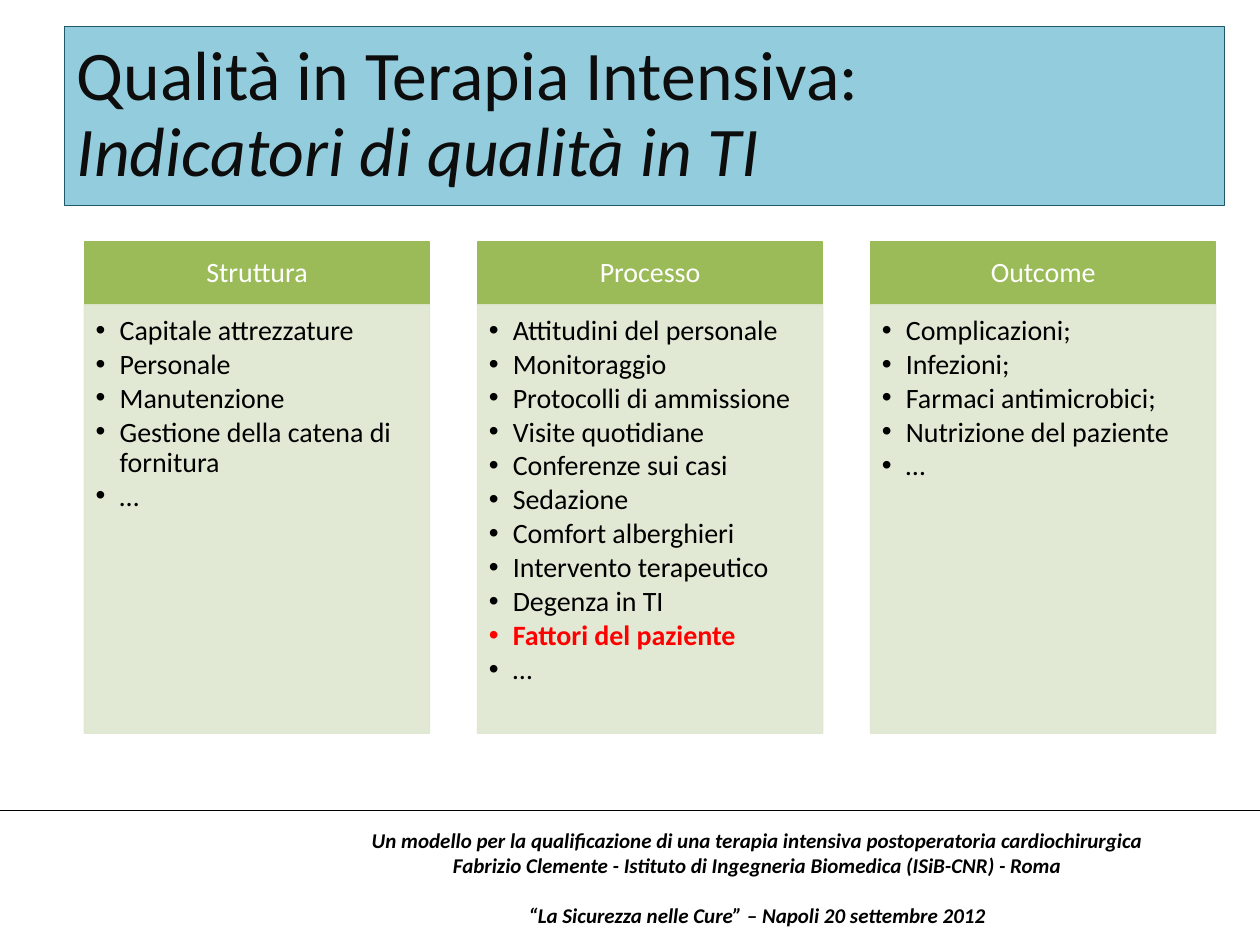
from lxml.etree import SubElement
from pptx import Presentation
from pptx.dml.color import RGBColor
from pptx.enum.shapes import MSO_CONNECTOR as Connector, MSO_SHAPE as Shape
from pptx.enum.text import MSO_ANCHOR as Anchor, PP_ALIGN as Align
from pptx.oxml.ns import qn
from pptx.util import Inches, Pt

COLORS = {
    "title_fill": "93CDDD", "title_line": "215968", "title_text": "0D0D0D",
    "header": "9BBB59", "body": "DEE7D1",
    "white": "FFFFFF", "black": "000000", "highlight": "FF0000",
}
HIGHLIGHTED = "Fattori del paziente"
INDICATORS = {
    "Struttura": ["Capitale attrezzature", "Personale", "Manutenzione",
                  "Gestione della catena di fornitura", "…"],
    "Processo": ["Attitudini del personale", "Monitoraggio", "Protocolli di ammissione",
                 "Visite quotidiane", "Conferenze sui casi", "Sedazione",
                 "Comfort alberghieri", "Intervento terapeutico", "Degenza in TI",
                 HIGHLIGHTED, "…"],
    "Outcome": ["Complicazioni;", "Infezioni;", "Farmaci antimicrobici;",
                "Nutrizione del paziente", "…"],
}
CREDITS = [
    "Un modello per la qualificazione di una terapia intensiva postoperatoria cardiochirurgica",
    "Fabrizio Clemente - Istituto di Ingegneria Biomedica (ISiB-CNR) - Roma",
    "“La Sicurezza nelle Cure” – Napoli 20 settembre 2012",
]


def color(name):
    """Return the named colour."""
    return RGBColor.from_string(COLORS[name])


def add_panel(slide, box, fill, line):
    """Add a filled rectangle with a thin outline."""
    panel = slide.shapes.add_shape(Shape.RECTANGLE, *map(Inches, box))
    panel.shadow.inherit = False
    panel.fill.solid()
    panel.fill.fore_color.rgb = color(fill)
    panel.line.color.rgb = color(line)
    panel.line.width = Pt(0.75)
    return panel


def set_frame(shape, anchor, insets=(0.1, 0.05, 0.1, 0.05)):
    """Set wrapping, anchor and insets, and return the text frame."""
    frame = shape.text_frame
    frame.word_wrap = True
    frame.vertical_anchor = anchor
    (frame.margin_left, frame.margin_top,
     frame.margin_right, frame.margin_bottom) = map(Inches, insets)
    return frame


def add_line(frame, index, text, size, ink, align=Align.LEFT, spacing=0.9,
             bold=False, italic=False):
    """Write one paragraph with a single run."""
    paragraph = frame.add_paragraph() if index else frame.paragraphs[0]
    paragraph.alignment = align
    paragraph.line_spacing = spacing
    run = paragraph.add_run()
    run.text = text
    font = run.font
    font.name, font.size, font.bold, font.italic = "Calibri", Pt(size), bold, italic
    font.color.rgb = color(ink)
    return paragraph


def add_bullet(paragraph):
    """Give a paragraph a hanging round bullet."""
    properties = paragraph._p.get_or_add_pPr()
    properties.set("marL", str(Inches(0.19)))
    properties.set("indent", str(-Inches(0.19)))
    SubElement(properties, qn("a:buFont"), typeface="Arial")
    SubElement(properties, qn("a:buChar"), char="•")


def add_title(slide, box):
    """Place the title band with its two lines."""
    frame = set_frame(add_panel(slide, box, "title_fill", "title_line"), Anchor.MIDDLE)
    add_line(frame, 0, "Qualità in Terapia Intensiva:", 39.8, "title_text")
    add_line(frame, 1, "Indicatori di qualità in TI", 39.8, "title_text", italic=True)


def add_column(slide, box, heading, items):
    """Place one indicator column: a header above a bulleted body."""
    left, top, width, height = box
    header_height = 0.5
    header = add_panel(slide, (left, top, width, header_height), "header", "header")
    frame = set_frame(header, Anchor.MIDDLE, (0.12, 0.07, 0.12, 0.07))
    add_line(frame, 0, heading, 16, "white", Align.CENTER)

    body = add_panel(slide, (left, top + header_height, width, height - header_height),
                     "body", "body")
    for tint in body._element.spPr.iter(qn("a:srgbClr")):
        SubElement(tint, qn("a:alpha"), val="90000")
    frame = set_frame(body, Anchor.TOP, (0.09, 0.09, 0.12, 0.14))
    for index, item in enumerate(items):
        marked = item == HIGHLIGHTED
        paragraph = add_line(frame, index, item, 16, "highlight" if marked else "black",
                             bold=marked)
        paragraph.level = 1
        paragraph.space_after = Pt(2.1)
        add_bullet(paragraph)


def add_columns(slide, box):
    """Spread the indicator columns evenly over the box."""
    left, top, width, height = box
    column_width = 2.74
    step = (width - column_width) / (len(INDICATORS) - 1)
    for index, (heading, items) in enumerate(INDICATORS.items()):
        add_column(slide, (left + index * step, top, column_width, height), heading, items)


def add_footer(slide, box):
    """Place the full-width rule and the credits below it."""
    left, top, width, height = box
    rule = slide.shapes.add_connector(Connector.STRAIGHT, Inches(0), Inches(top),
                                      Inches(10), Inches(top))
    rule.line.color.rgb = color("black")
    rule.line.width = Pt(0.75)
    SubElement(rule._element.spPr, qn("a:effectLst"))
    credits_box = slide.shapes.add_textbox(*map(Inches, box))
    frame = set_frame(credits_box, Anchor.MIDDLE)
    for index, credit in enumerate(CREDITS):
        paragraph = add_line(frame, index, credit, 12, "black", Align.CENTER, 1.0,
                             bold=True, italic=True)
    paragraph.space_before = Pt(14.4)


def main():
    """Build and save the slide."""
    deck = Presentation()
    deck.slide_width, deck.slide_height = Inches(10), Inches(7.5)
    slide = deck.slides.add_slide(deck.slide_layouts[6])
    add_footer(slide, (2.72, 6.43, 6.58, 1.07))
    add_title(slide, (0.51, 0.21, 9.21, 1.42))
    add_columns(slide, (0.67, 1.92, 8.98, 3.9))
    deck.save("out.pptx")


if __name__ == "__main__":
    main()
